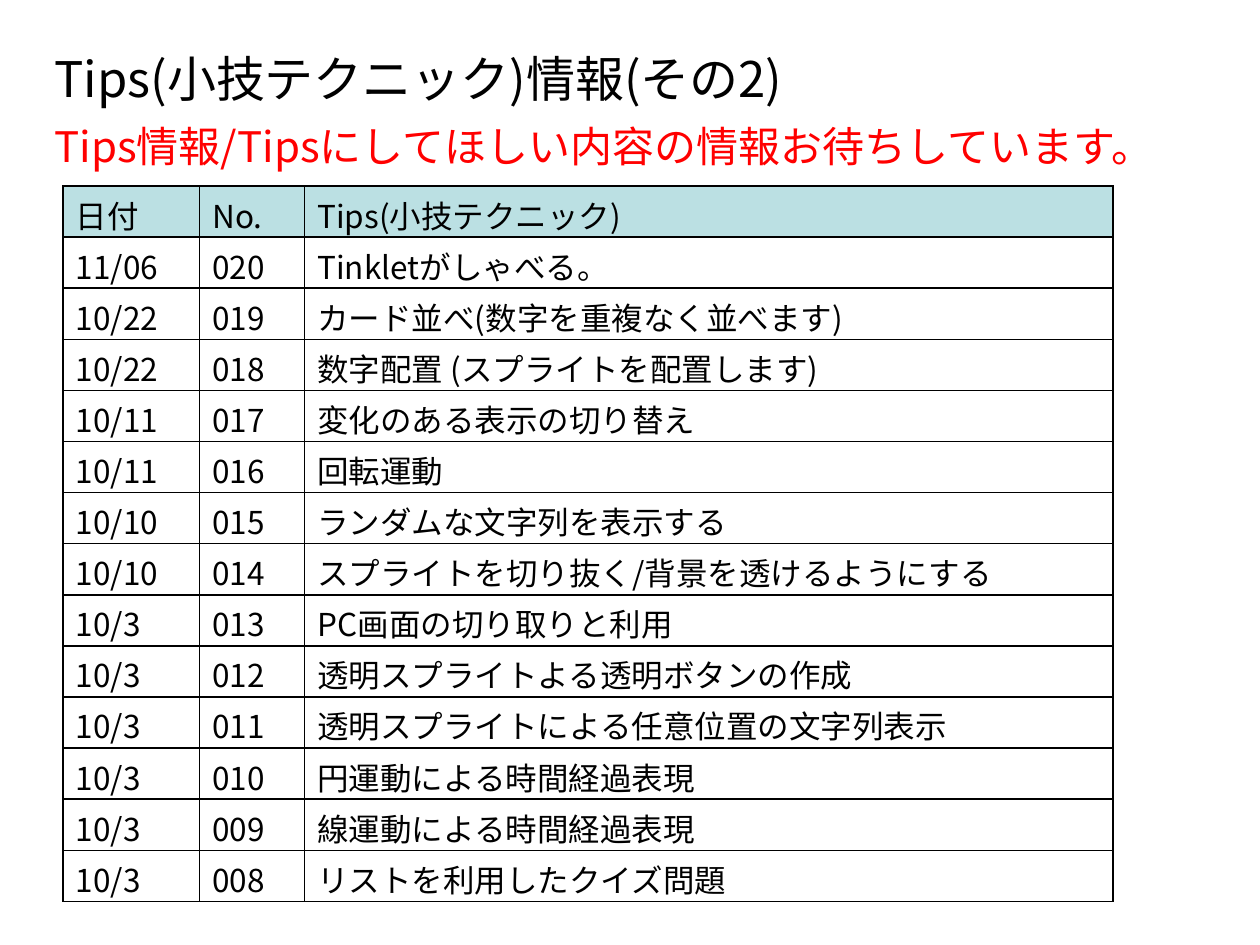
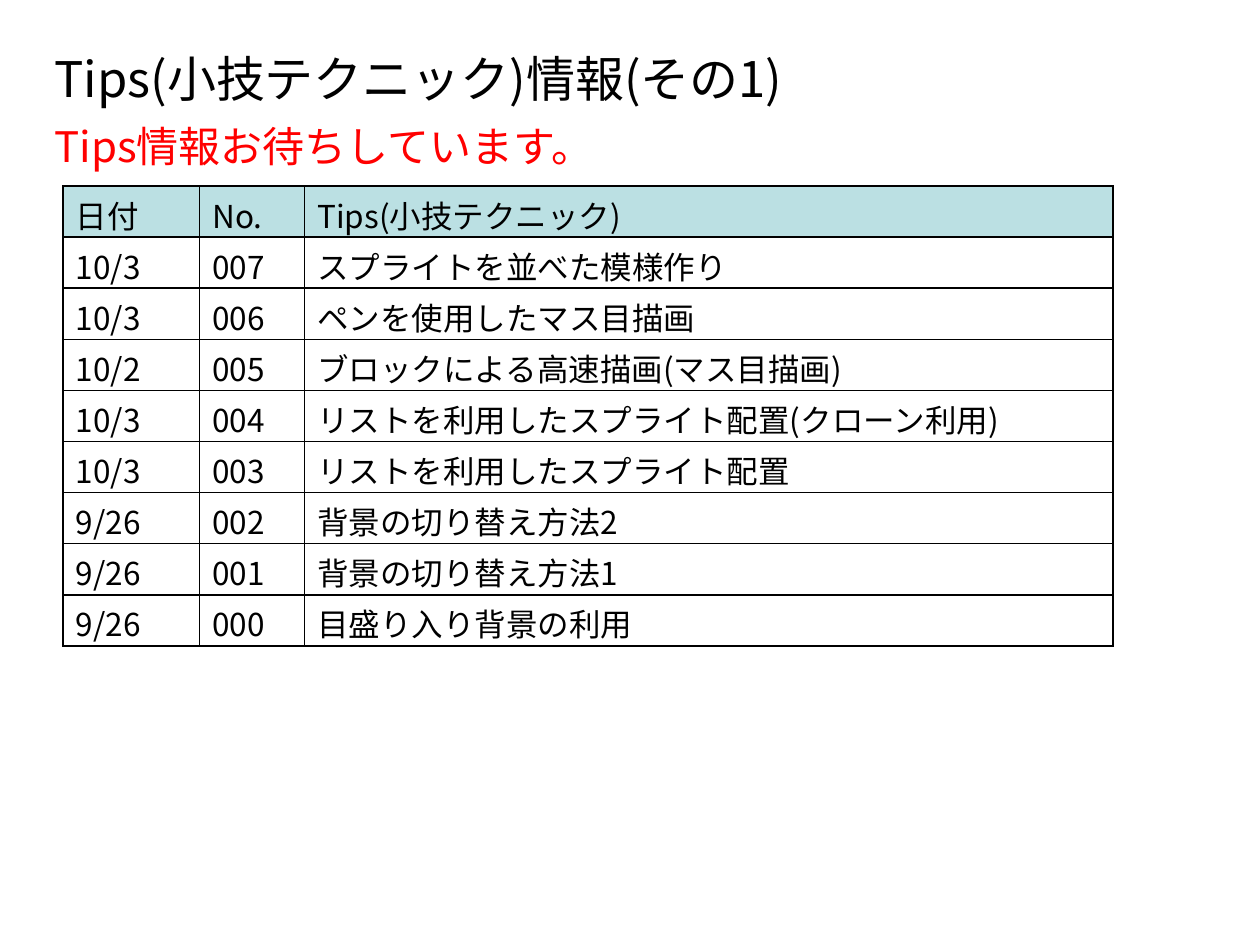
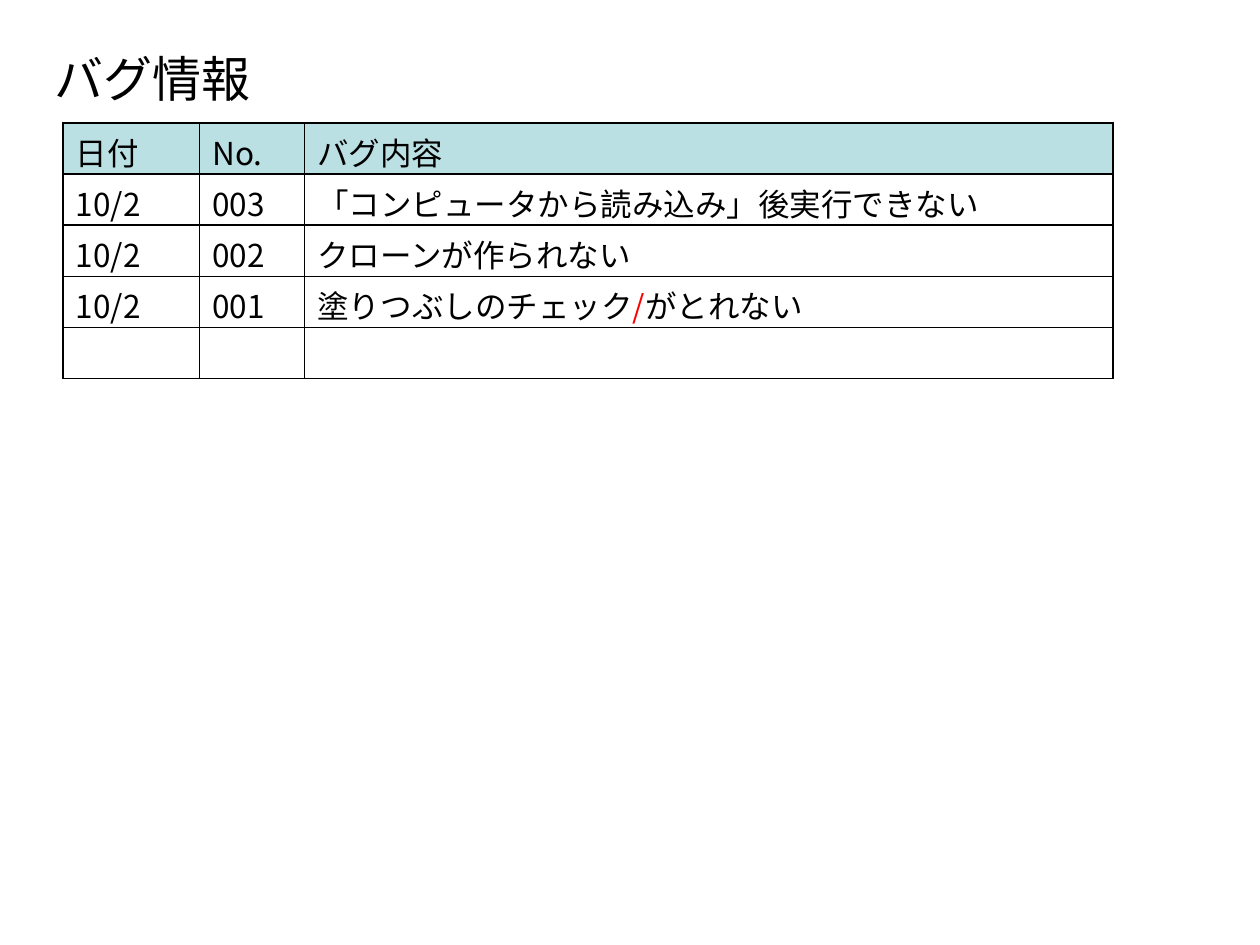
"""Build the tips and bug lists as three table slides."""
from dataclasses import dataclass

from lxml.etree import SubElement
from pptx import Presentation
from pptx.dml.color import RGBColor
from pptx.enum.text import MSO_ANCHOR, MSO_AUTO_SIZE, PP_ALIGN
from pptx.oxml.ns import qn
from pptx.util import Cm, Pt


@dataclass(frozen=True)
class Theme:
    font: str = "Noto Sans CJK JP"
    ink: RGBColor = RGBColor(0x00, 0x00, 0x00)
    alert: RGBColor = RGBColor(0xFF, 0x00, 0x00)
    header: RGBColor = RGBColor(0xBB, 0xE0, 0xE3)
    title_size: Pt = Pt(28)
    appeal_size: Pt = Pt(24)
    table_size: Pt = Pt(18)
    border: Pt = Pt(1)


theme = Theme()
HEADING_FORMAT = {
    "margin_left": Cm(0.25), "margin_right": Cm(0.25), "margin_top": Cm(0.12), "margin_bottom": 0,
    "word_wrap": True, "auto_size": MSO_AUTO_SIZE.NONE, "vertical_anchor": MSO_ANCHOR.TOP,
}
CELL_FORMAT = {
    "margin_left": Cm(0.26), "margin_right": Cm(0.26), "margin_top": Cm(0.11), "margin_bottom": 0,
    "vertical_anchor": MSO_ANCHOR.TOP,
}
COLUMN_WIDTHS = (Cm(2.75), Cm(2.12), Cm(16.3))
ROW_HEIGHT = Cm(1.03)

pages = [
    {
        "title": "Tips(小技テクニック)情報(その2)",
        "appeal": "Tips情報/Tipsにしてほしい内容の情報お待ちしています。",
        "appeal_width": Cm(23.7),
        "table_top": Cm(3.75),
        "rows": [
            ("日付", "No.", "Tips(小技テクニック)"),
            ("11/06", "020", "Tinkletがしゃべる。"),
            ("10/22", "019", "カード並べ(数字を重複なく並べます)"),
            ("10/22", "018", "数字配置 (スプライトを配置します)"),
            ("10/11", "017", "変化のある表示の切り替え"),
            ("10/11", "016", "回転運動"),
            ("10/10", "015", "ランダムな文字列を表示する"),
            ("10/10", "014", "スプライトを切り抜く/背景を透けるようにする"),
            ("10/3", "013", "PC画面の切り取りと利用"),
            ("10/3", "012", "透明スプライトよる透明ボタンの作成"),
            ("10/3", "011", "透明スプライトによる任意位置の文字列表示"),
            ("10/3", "010", "円運動による時間経過表現"),
            ("10/3", "009", "線運動による時間経過表現"),
            ("10/3", "008", "リストを利用したクイズ問題"),
        ],
    },
    {
        "title": "Tips(小技テクニック)情報(その1)",
        "appeal": "Tips情報お待ちしています。",
        "appeal_width": Cm(11.85),
        "table_top": Cm(3.75),
        "rows": [
            ("日付", "No.", "Tips(小技テクニック)"),
            ("10/3", "007", "スプライトを並べた模様作り"),
            ("10/3", "006", "ペンを使用したマス目描画"),
            ("10/2", "005", "ブロックによる高速描画(マス目描画)"),
            ("10/3", "004", "リストを利用したスプライト配置(クローン利用)"),
            ("10/3", "003", "リストを利用したスプライト配置"),
            ("9/26", "002", "背景の切り替え方法2"),
            ("9/26", "001", "背景の切り替え方法1"),
            ("9/26", "000", "目盛り入り背景の利用"),
        ],
    },
    {
        "title": "バグ情報",
        "appeal": "",
        "table_top": Cm(2.48),
        "rows": [
            ("日付", "No.", "バグ内容"),
            ("10/2", "003", "「コンピュータから読み込み」後実行できない"),
            ("10/2", "002", "クローンが作られない"),
            ("10/2", "001", ("塗りつぶしのチェック", "/", "がとれない")),
            ("", "", ""),
        ],
    },
]


def write(frame, text, size, colour):
    """Add one formatted run to the first paragraph of a text frame."""
    paragraph = frame.paragraphs[0]
    paragraph.alignment = PP_ALIGN.LEFT
    run = paragraph.add_run()
    run.text = text
    for name, value in {"size": size, "name": theme.font, "bold": False}.items():
        setattr(run.font, name, value)
    run.font.color.rgb = colour
    SubElement(run.font._element, qn("a:ea"), typeface=theme.font)


def draw_borders(cell):
    """Rule all four sides of a table cell."""
    properties = cell._tc.get_or_add_tcPr()
    for position, side in enumerate(("lnL", "lnR", "lnT", "lnB")):
        line = SubElement(properties, qn(f"a:{side}"), w=str(theme.border))
        SubElement(SubElement(line, qn("a:solidFill")), qn("a:srgbClr"), val=str(theme.ink))
        properties.insert(position, line)


deck = Presentation()
deck.slide_width, deck.slide_height = Cm(25.4), Cm(19.05)

for page in pages:
    slide = deck.slides.add_slide(deck.slide_layouts[5])
    title = slide.shapes.title
    title.left, title.top, title.width, title.height = Cm(0.85), Cm(0.85), Cm(23.7), Cm(1.44)
    headings = [(title, page["title"], theme.title_size, theme.ink)]
    if page["appeal"]:
        appeal = slide.shapes.add_textbox(Cm(0.85), Cm(2.31), page["appeal_width"], Cm(1.27))
        headings.append((appeal, page["appeal"], theme.appeal_size, theme.alert))
    for heading, text, size, colour in headings:
        for name, value in HEADING_FORMAT.items():
            setattr(heading.text_frame, name, value)
        write(heading.text_frame, text, size, colour)

    rows = page["rows"]
    table = slide.shapes.add_table(
        len(rows), len(COLUMN_WIDTHS), Cm(1.27), page["table_top"],
        sum(COLUMN_WIDTHS), ROW_HEIGHT * len(rows)).table
    table.first_row = table.horz_banding = False
    for column, width in zip(table.columns, COLUMN_WIDTHS):
        column.width = width
    for row_index, entries in enumerate(rows):
        table.rows[row_index].height = ROW_HEIGHT
        for column_index, entry in enumerate(entries):
            cell = table.cell(row_index, column_index)
            for name, value in CELL_FORMAT.items():
                setattr(cell, name, value)
            if row_index == 0:
                cell.fill.solid()
                cell.fill.fore_color.rgb = theme.header
            else:
                cell.fill.background()
            draw_borders(cell)
            parts = (entry,) if isinstance(entry, str) else entry
            for part_index, part in enumerate(parts):
                if part:
                    colour = theme.alert if part_index % 2 else theme.ink
                    write(cell.text_frame, part, theme.table_size, colour)

deck.save("out.pptx")
